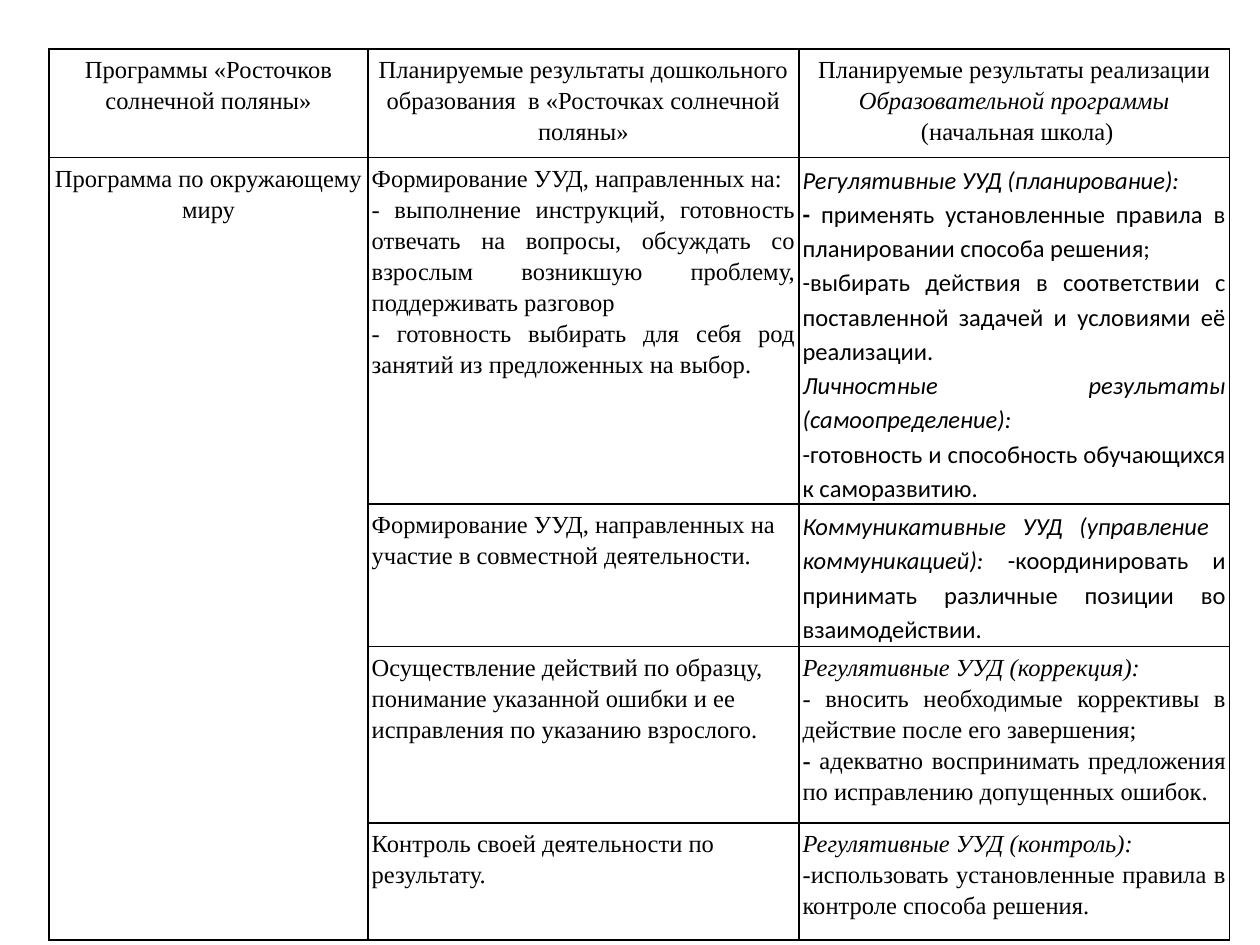
"""Build a slide with a table of preschool and primary school learning results."""
from pptx import Presentation
from pptx.dml.color import RGBColor
from pptx.enum.text import PP_ALIGN as Align
from pptx.oxml.ns import qn
from pptx.util import Inches, Pt
from lxml.etree import SubElement as Sub

HUES = {"back": "FFFFFF", "ink": "000000"}
SERIF, SANS = "Times New Roman", "Calibri"
MID, LEFT, JUST = Align.CENTER, Align.LEFT, Align.JUSTIFY
GOAL = "Формирование УУД, направленных на"

CELLS = [
    (0, 0, SERIF, MID, [[("Программы «Росточков солнечной поляны»", "")]]),
    (0, 1, SERIF, MID, [[("Планируемые результаты дошкольного образования  в «Росточках солнечной поляны»", "")]]),
    (0, 2, SERIF, MID, [
        [("Планируемые результаты реализации ", ""), ("Образовательной программы", "i")],
        [(" (начальная школа)", "")]]),
    (1, 0, SERIF, MID, [[("Программа по окружающему миру", "")]]),
    (1, 1, SERIF, JUST, [
        [(GOAL + ":", "")],
        [("- выполнение инструкций, готовность отвечать на вопросы, обсуждать со взрослым "
          "возникшую проблему, поддерживать разговор", "")],
        [("- готовность выбирать для себя род занятий из предложенных на выбор. ", "")]]),
    (1, 2, SANS, JUST, [
        [("Регулятивные УУД (планирование): ", "i")],
        [("- ", "b"), ("применять установленные правила в планировании способа решения;", "")],
        [("выбирать действия в соответствии с поставленной задачей и условиями её реализации.", "-")],
        [("Личностные результаты (самоопределение): ", "i")],
        [("-готовность и способность обучающихся к саморазвитию.", "")]]),
    (2, 1, SERIF, LEFT, [[(GOAL + "  участие в совместной деятельности.", "")]]),
    (2, 2, SANS, JUST, [
        [("Коммуникативные УУД (управление  коммуникацией): ", "i"),
         ("-координировать и принимать различные позиции во взаимодействии.", "")]]),
    (3, 1, SERIF, LEFT, [
        [("Осуществление действий по образцу, понимание указанной ошибки и ее исправления "
          "по указанию взрослого.", "")]]),
    (3, 2, SERIF, JUST, [
        [("Регулятивные УУД (коррекция):", "i")],
        [("- ", "i"), ("вносить необходимые коррективы в действие после его завершения; ", "")],
        [("- ", "b"), ("адекватно воспринимать предложения по исправлению допущенных ошибок.", "")]]),
    (4, 1, SERIF, LEFT, [[("Контроль своей деятельности по результату.", "")]]),
    (4, 2, SERIF, JUST, [
        [("Регулятивные УУД (контроль): ", "i")],
        [("-", "i"), ("использовать установленные правила в контроле способа решения.", "")]]),
]


def frame(cell):
    props = cell._tc.get_or_add_tcPr()
    for side in ("lnL", "lnR", "lnT", "lnB"):
        line = Sub(props, qn("a:" + side), w=str(Pt(1)))
        Sub(Sub(line, qn("a:solidFill")), qn("a:srgbClr"), val=HUES["ink"])
    cell.fill.background()
    cell.margin_left = cell.margin_right = Inches(0.03)
    cell.margin_top, cell.margin_bottom = Inches(0.03), Inches(0)


def write(para, runs, font, align):
    para.alignment = align
    para.line_spacing = 1.15
    for text, style in runs:
        if style == "-":
            props = para._p.get_or_add_pPr()
            props.set("marL", "0")
            props.set("indent", "0")
            Sub(props, qn("a:buFont"), typeface=font)
            Sub(props, qn("a:buChar"), char="-")
        run = para.add_run()
        run.text = text
        face = run.font
        face.name, face.size = font, Pt(14)
        face.bold, face.italic = style == "b", style == "i"
        face.color.rgb = RGBColor.from_string(HUES["ink"])


deck = Presentation()
deck.slide_width, deck.slide_height = Inches(10), Inches(7.5)
slide = deck.slides.add_slide(deck.slide_layouts[6])
back = slide.background.fill
back.solid()
back.fore_color.rgb = RGBColor.from_string(HUES["back"])

widths = [2.53, 3.42, 3.42]
heights = [0.86, 2.74, 1.13, 1.4, 0.93]
table = slide.shapes.add_table(
    len(heights), len(widths), Inches(0.39), Inches(0.39),
    Inches(sum(widths)), Inches(sum(heights))).table
table.first_row = table.horz_banding = False
for col, width in zip(table.columns, widths):
    col.width = Inches(width)
for row, height in zip(table.rows, heights):
    row.height = Inches(height)
for cell in table.iter_cells():
    frame(cell)
table.cell(1, 0).merge(table.cell(4, 0))

for row, col, font, align, paras in CELLS:
    body = table.cell(row, col).text_frame
    for num, runs in enumerate(paras):
        para = body.add_paragraph() if num else body.paragraphs[0]
        write(para, runs, font, align)
table.cell(2, 2).text_frame.paragraphs[0].space_after = Pt(10)

deck.save("out.pptx")
